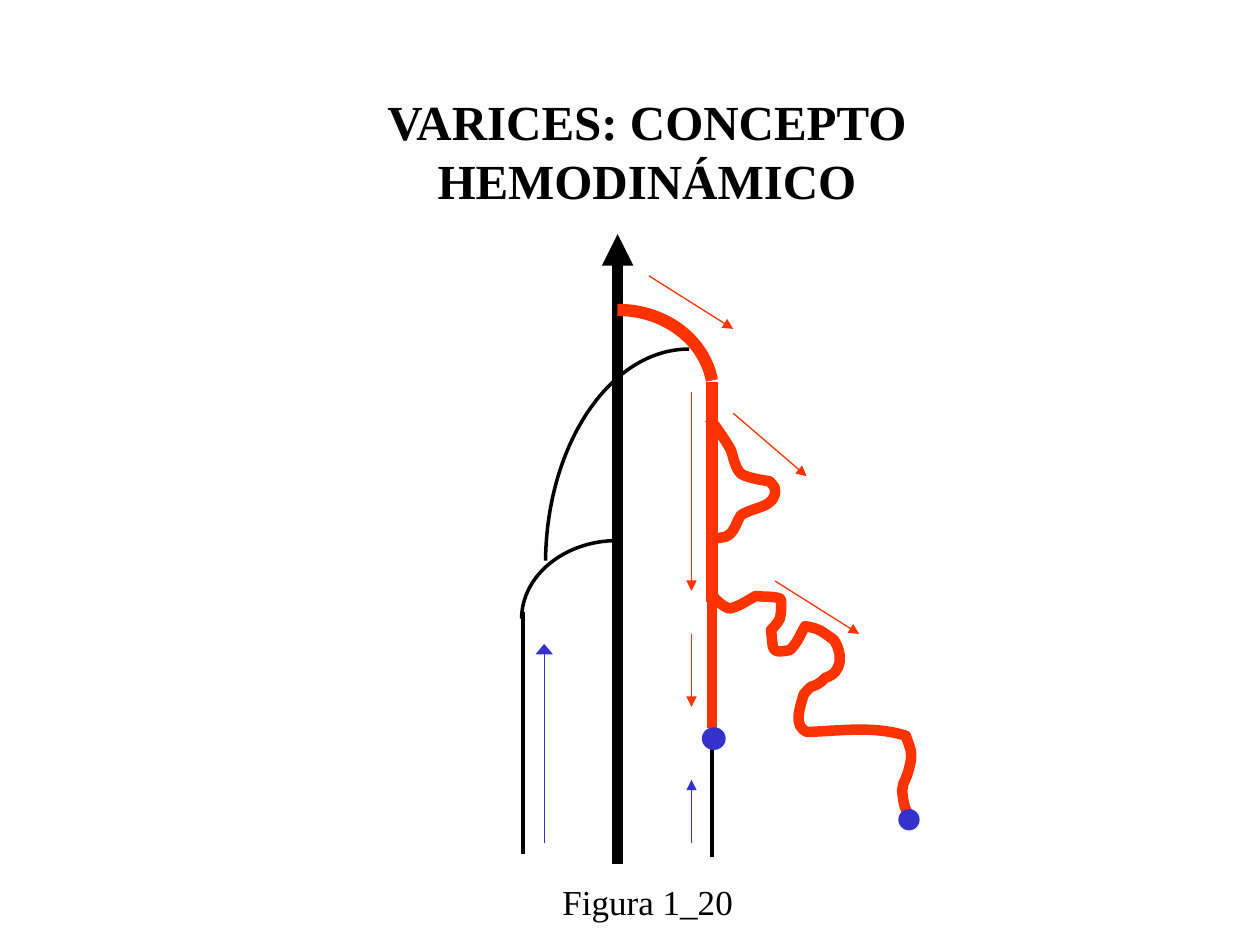
from lxml import etree
from pptx import Presentation
from pptx.dml.color import RGBColor
from pptx.enum.shapes import MSO_CONNECTOR, MSO_SHAPE
from pptx.enum.text import MSO_AUTO_SIZE, PP_ALIGN
from pptx.oxml.ns import qn
from pptx.util import Cm, Pt

STRAIGHT = MSO_CONNECTOR.STRAIGHT
OVAL = MSO_SHAPE.OVAL
NO_AUTOFIT = MSO_AUTO_SIZE.NONE
CENTER = PP_ALIGN.CENTER
LEFT = PP_ALIGN.LEFT

BLACK = RGBColor(0x00, 0x00, 0x00)
RED = RGBColor(0xFF, 0x33, 0x00)
BLUE = RGBColor(0x33, 0x33, 0xCC)
FONT = "Times New Roman"
CURVE_UNIT = Cm(0.0254)

presentation = Presentation()
presentation.slide_width = Cm(25.4)
presentation.slide_height = Cm(19.05)
slide = presentation.slides.add_slide(presentation.slide_layouts[6])


def add_line(start, end, color, width, head_width=None):
    ends = [Cm(value) for value in (*start, *end)]
    connector = slide.shapes.add_connector(STRAIGHT, *ends)
    connector.line.color.rgb = color
    connector.line.width = Pt(width)
    if head_width:
        outline = connector.line._get_or_add_ln()
        etree.SubElement(outline, qn("a:tailEnd"), type="triangle", w=head_width)
    etree.SubElement(connector._element.spPr, qn("a:effectLst"))


def add_curve(start, segments, color, width):
    anchors = [start] + [segment[4:] for segment in segments]
    left, top = (min(values) for values in zip(*anchors))
    builder = slide.shapes.build_freeform(*start, scale=CURVE_UNIT)
    builder.add_line_segments(anchors[1:], close=False)
    shape = builder.convert_to_shape()
    for element, segment in zip(list(shape._element.iter(qn("a:lnTo"))), segments):
        element.tag = qn("a:cubicBezTo")
        for index in (0, 1):
            x, y = segment[2 * index:2 * index + 2]
            control = etree.Element(qn("a:pt"), x=str(x - left), y=str(y - top))
            element.insert(index, control)
    shape.shadow.inherit = False
    shape.fill.background()
    shape.line.color.rgb = color
    shape.line.width = Pt(width)


vessels = [
    ((12.45, 17.42), (12.45, 4.72), BLACK, 6, "med"),
    ((10.54, 12.34), (10.54, 17.22), BLACK, 2),
    ((14.35, 7.7), (14.35, 17.27), BLACK, 2.25),
    ((14.35, 12.14), (14.35, 14.68), RED, 6),
    ((14.35, 7.7), (14.35, 12.14), RED, 7),
]
for vessel in vessels:
    add_line(*vessel)

flow_arrows = [
    ((13.08, 5.56), (14.78, 6.63), RED, "med"),
    ((14.78, 8.33), (16.26, 9.6), RED, "med"),
    ((15.62, 11.71), (17.32, 12.78), RED, "med"),
    ((13.94, 7.9), (13.94, 11.91), RED, "med"),
    ((13.94, 12.78), (13.94, 14.25), RED, "med"),
    ((10.97, 16.99), (10.97, 12.98), BLUE, "lg"),
    ((13.94, 16.99), (13.94, 15.72), BLUE, "med"),
]
for start, end, color, head_width in flow_arrows:
    add_line(start, end, color, 0.75, head_width)

lower_arch = [(414, 457, 448, 429, 490, 429)]
upper_arch = [(434, 352, 485, 277, 547, 277)]
saphenous_arch = [(528, 246, 559, 270, 565, 302)]
short_varix = [
    (569, 340, 575, 348, 580, 357),
    (582, 362, 583, 371, 588, 376),
    (594, 380, 611, 382, 611, 382),
    (612, 384, 615, 386, 615, 388),
    (617, 403, 598, 402, 588, 409),
    (584, 415, 583, 423, 576, 426),
    (572, 427, 563, 428, 563, 428),
]
long_varix = [
    (569, 477, 573, 481, 579, 483),
    (588, 481, 592, 477, 600, 473),
    (606, 474, 613, 473, 619, 475),
    (620, 475, 620, 478, 620, 480),
    (620, 483, 620, 487, 619, 491),
    (618, 494, 612, 500, 612, 500),
    (614, 516, 611, 519, 627, 516),
    (633, 510, 635, 504, 639, 497),
    (651, 499, 652, 501, 662, 508),
    (669, 519, 669, 534, 655, 538),
    (653, 540, 651, 542, 649, 543),
    (648, 544, 646, 544, 644, 545),
    (642, 546, 640, 549, 638, 551),
    (635, 561, 629, 577, 641, 581),
    (667, 580, 694, 576, 719, 584),
    (722, 594, 725, 596, 722, 608),
    (721, 613, 719, 618, 717, 622),
    (717, 624, 716, 627, 716, 627),
    (717, 638, 718, 641, 722, 649),
]
add_curve((414, 491), lower_arch, BLACK, 2)
add_curve((433, 445), upper_arch, BLACK, 2)
add_curve((490, 246), saphenous_arch, RED, 7)
add_curve((563, 332), short_varix, RED, 6)
add_curve((565, 472), long_varix, RED, 6)

perforators = [(14.15, 14.66, 0.48, 0.46), (18.11, 16.31, 0.43, 0.43)]
for bounds in perforators:
    shape = slide.shapes.add_shape(OVAL, *[Cm(value) for value in bounds])
    shape.shadow.inherit = False
    shape.fill.solid()
    shape.fill.fore_color.rgb = BLUE
    shape.line.fill.background()

labels = [
    ("VARICES: CONCEPTO HEMODINÁMICO", (3.3, 1.73, 19.48, 2.62), 28, True, CENTER, True),
    ("Figura 1_20", (11.09, 17.63, 3.94, 1.09), 20, False, LEFT, False),
]
for text, bounds, size, bold, alignment, wrap in labels:
    text_box = slide.shapes.add_textbox(*[Cm(value) for value in bounds])
    text_box.text_frame.word_wrap = wrap
    text_box.text_frame.auto_size = NO_AUTOFIT
    paragraph = text_box.text_frame.paragraphs[0]
    paragraph.alignment = alignment
    run = paragraph.add_run()
    run.text = text
    run.font.name = FONT
    run.font.size = Pt(size)
    run.font.bold = bold
    run.font.color.rgb = BLACK

presentation.save("out.pptx")
